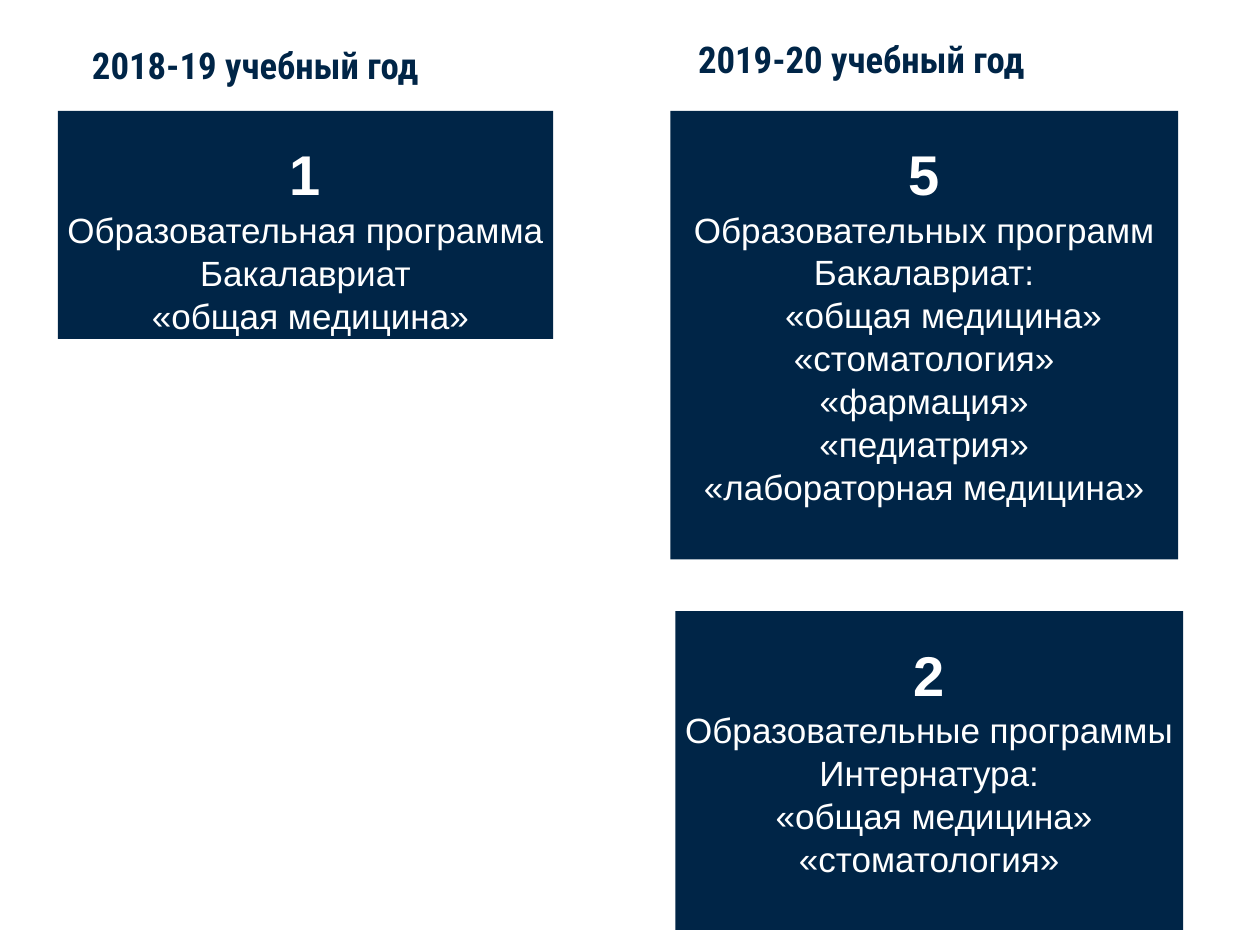
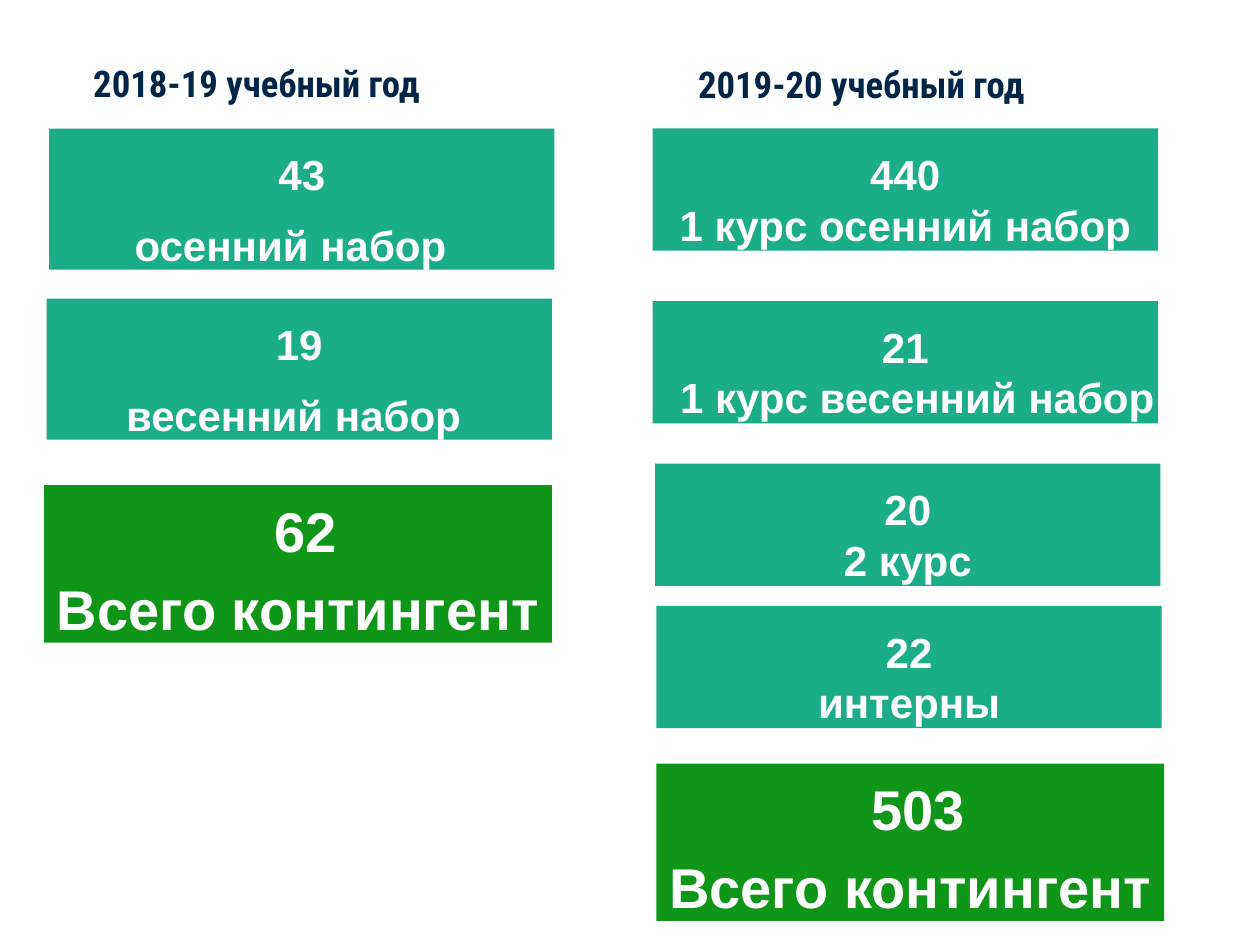
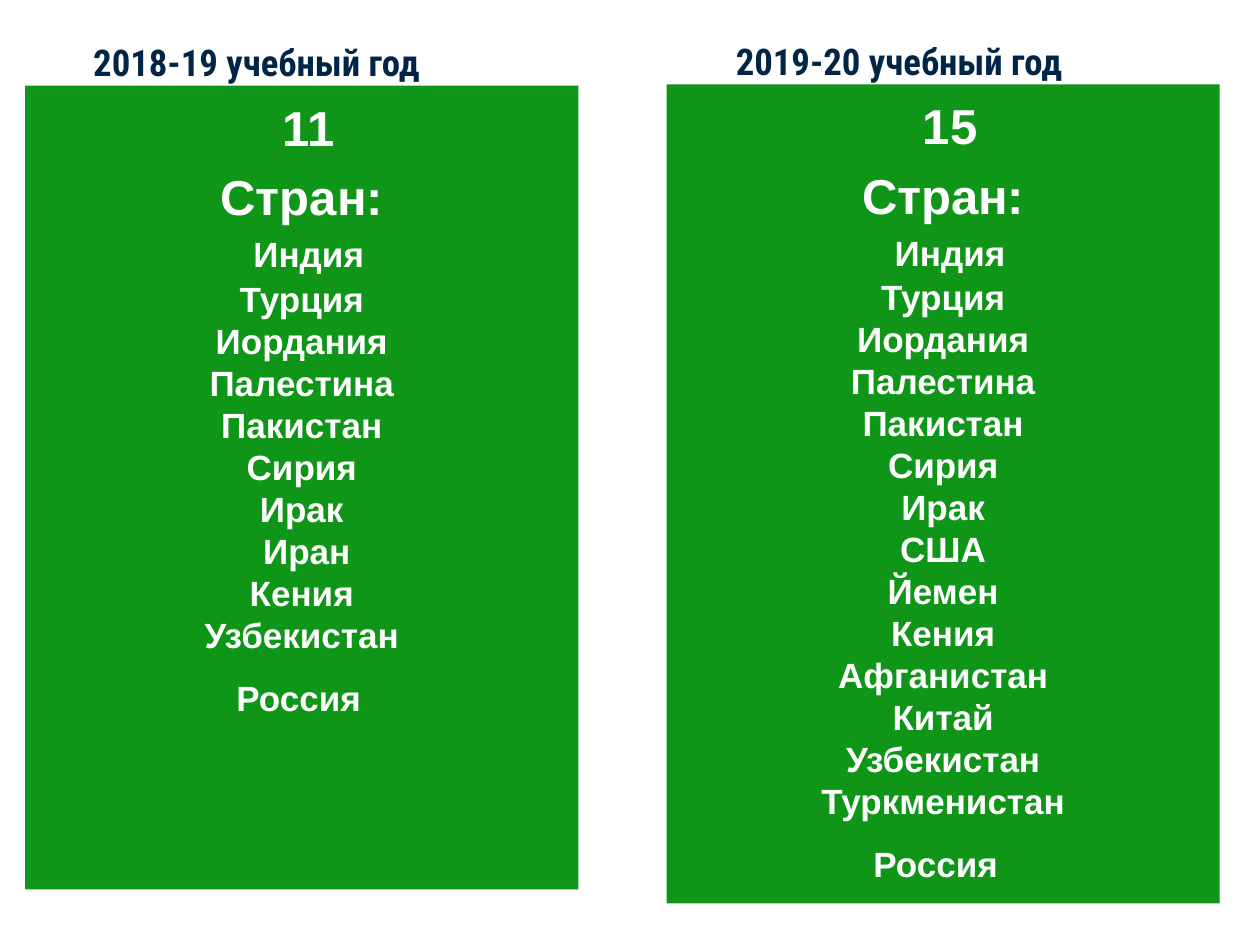
from pptx import Presentation
from pptx.dml.color import RGBColor
from pptx.enum.shapes import MSO_SHAPE
from pptx.enum.text import MSO_ANCHOR, PP_ALIGN
from pptx.util import Emu, Inches, Pt

NAVY, TEAL, GREEN, WHITE = "002547", "1BAC88", "0F9517", "FFFFFF"
YEARS = ("2018-19 учебный год", "2019-20 учебный год")
TITLE_SIZE = (3.31, 0.37)

# fill, top inset, space before, number size, label size, bold label
STYLES = {
    "program": (NAVY, 0.23, 0.6, 32, 20, False),
    "intake": (TEAL, 0.16, 11.4, 24, 24, True),
    "course": (TEAL, 0.16, 0, 24, 24, True),
    "total": (GREEN, 0.09, 6.1, 32, 32, True),
    "countries": (GREEN, 0.09, 0, 28, 20, True),
}

SHARED_COUNTRIES = ["Турция", "Иордания", "Палестина", "Пакистан", "Сирия", "Ирак"]

# A line is a text or (text, indent): positive from the left, negative from the right
SLIDES = [
    {
        "titles": [(0.72, 0.33), (5.53, 0.28)],
        "boxes": [
            ("program", (0.46, 0.88, 3.93, 1.81),
             ["1", "Образовательная программа", "Бакалавриат", ("«общая медицина»", 0.08)]),
            ("program", (5.32, 0.88, 4.03, 3.56),
             ["5", "Образовательных программ Бакалавриат:", ("«общая медицина»", 0.31),
              "«стоматология»", "«фармация»", "«педиатрия»", "«лабораторная медицина»"]),
            ("program", (5.36, 4.85, 4.03, 2.53),
             ["2", "Образовательные программы", "Интернатура:",
              ("«общая медицина»", 0.08), "«стоматология»"]),
        ],
    },
    {
        "titles": [(0.73, 0.47), (5.53, 0.48)],
        "boxes": [
            ("intake", (0.39, 1.02, 4.01, 1.12), ["43", ("осенний набор", -0.18)]),
            ("intake", (0.37, 2.37, 4.01, 1.12), ["19", ("весенний набор", -0.09)]),
            ("total", (0.35, 3.85, 4.03, 1.25), [("62", 0.12), "Всего контингент"]),
            ("course", (5.18, 1.02, 4.01, 0.97), ["440", "1 курс осенний набор"]),
            ("course", (5.18, 2.39, 4.01, 0.97), ["21", ("1 курс весенний набор", 0.19)]),
            ("course", (5.2, 3.68, 4.01, 0.97), ["20", "2 курс"]),
            ("course", (5.21, 4.81, 4.01, 0.97), ["22", "интерны"]),
            ("total", (5.21, 6.06, 4.03, 1.25), [("503", 0.12), "Всего контингент"]),
        ],
    },
    {
        "titles": [(0.73, 0.31), (5.83, 0.3)],
        "boxes": [
            ("countries", (5.29, 0.67, 4.39, 6.5),
             [("15", 0.11), "Стран:", ("Индия", 0.11), *SHARED_COUNTRIES, "США", "Йемен",
              "Кения", "Афганистан", "Китай", "Узбекистан", "Туркменистан",
              ("Россия", -0.12)]),
            ("countries", (0.2, 0.68, 4.39, 6.38),
             [("11", 0.11), "Стран:", ("Индия", 0.11), *SHARED_COUNTRIES, ("Иран", 0.08),
              "Кения", "Узбекистан", ("Россия", -0.05)]),
        ],
    },
]

COUNTRY_SPACING = {"Стран:": 6.1, "Индия": 4, "Турция": 1.5, "Россия": 12}


def color(value):
    return RGBColor.from_string(value)


def prepare_frame(shape, top_inset):
    frame = shape.text_frame
    frame.word_wrap = True
    frame.vertical_anchor = MSO_ANCHOR.TOP
    frame.margin_left = frame.margin_right = frame.margin_bottom = 0
    frame.margin_top = Inches(top_inset)
    return frame


def set_font(para, name, size, fill, bold):
    font = para.font
    font.name, font.size, font.bold = name, Pt(size), bold
    font.color.rgb = color(fill)


def add_title(page, text, place):
    box = page.shapes.add_textbox(*map(Inches, place + TITLE_SIZE))
    para = prepare_frame(box, 0.01).paragraphs[0]
    para.text = text
    para.space_before = Pt(0.9)
    para._p.get_or_add_pPr().set("marL", str(Inches(0.01)))
    set_font(para, "Roboto Condensed", 21, NAVY, True)


def add_box(page, style, place, lines):
    fill, inset, spacing, number_size, label_size, bold = STYLES[style]
    box = page.shapes.add_shape(MSO_SHAPE.RECTANGLE, *map(Inches, place))
    box.shadow.inherit = False
    box.fill.solid()
    box.fill.fore_color.rgb = color(fill)
    box.line.fill.background()
    frame = prepare_frame(box, inset)
    for index, line in enumerate(lines):
        text, indent = line if isinstance(line, tuple) else (line, 0)
        para = frame.add_paragraph() if index else frame.paragraphs[0]
        para.text = text
        para.alignment = PP_ALIGN.CENTER
        gap = COUNTRY_SPACING.get(text, 0) if style == "countries" else spacing
        para.space_before = Pt(gap)
        if indent:
            side = "marL" if indent > 0 else "marR"
            para._p.get_or_add_pPr().set(side, str(Emu(Inches(abs(indent)))))
        large = index == 0 or text == "Стран:"
        set_font(para, "Arial", number_size if large else label_size, WHITE, large or bold)


def main():
    deck = Presentation()
    deck.slide_width, deck.slide_height = Inches(10), Inches(7.5)
    for content in SLIDES:
        page = deck.slides.add_slide(deck.slide_layouts[6])
        for year, place in zip(YEARS, content["titles"]):
            add_title(page, year, place)
        for style, place, lines in content["boxes"]:
            add_box(page, style, place, lines)
    deck.save("out.pptx")


if __name__ == "__main__":
    main()
